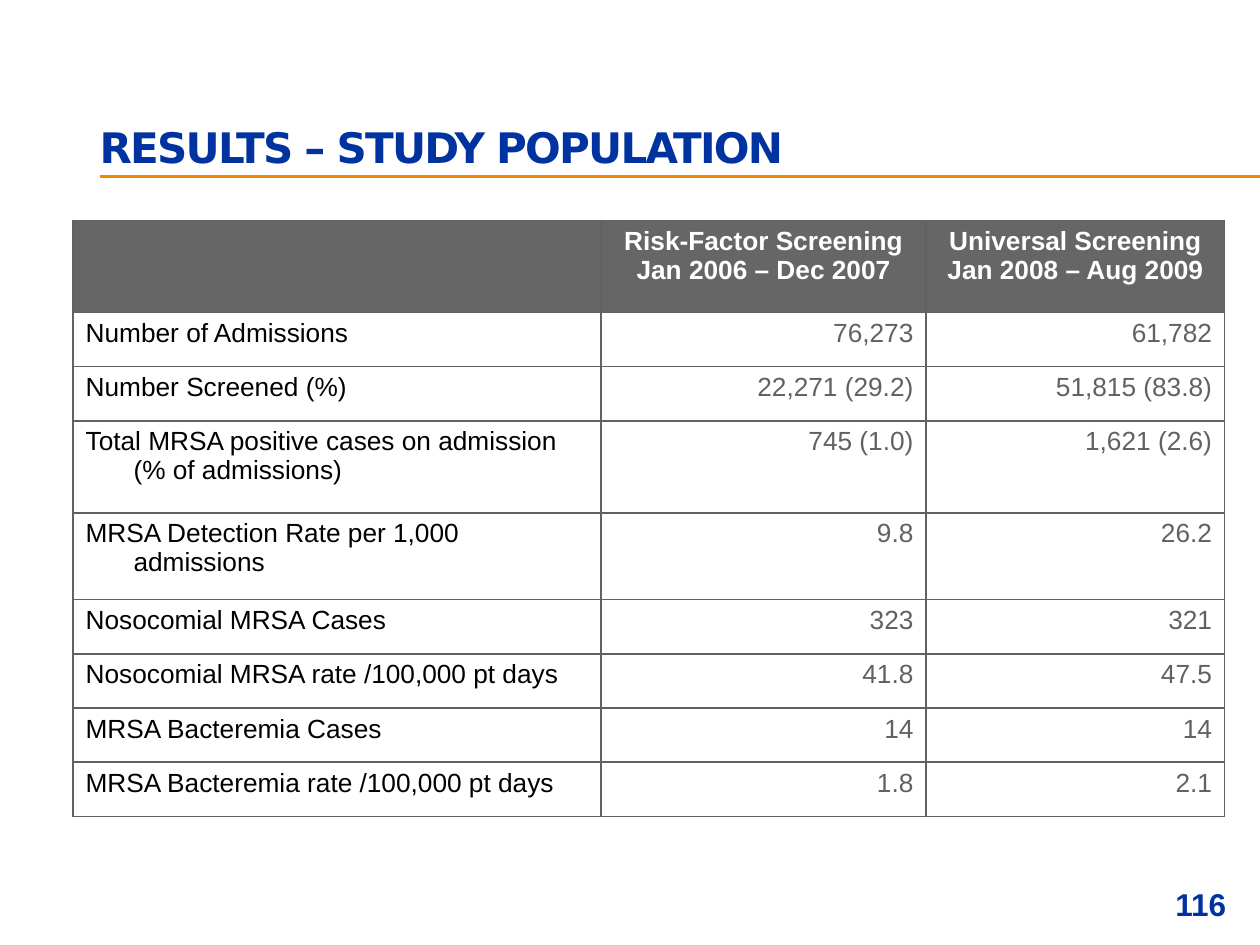
from dataclasses import dataclass

from lxml import etree
from pptx import Presentation
from pptx import util as u
from pptx.dml.color import RGBColor
from pptx.enum import shapes, text
from pptx.oxml import ns


@dataclass(frozen=True)
class Theme:
    blue: str = "0033A0"
    orange: str = "ED8B00"
    gray: str = "606164"
    header: str = "666666"
    white: str = "FFFFFF"
    black: str = "000000"
    font: str = "Arial"
    title_font: str = "DejaVu Sans"
    title_size: int = 24
    number_size: int = 18
    table_size: int = 15


T = Theme()
LEFT, CENTER, RIGHT = text.PP_ALIGN.LEFT, text.PP_ALIGN.CENTER, text.PP_ALIGN.RIGHT
COLUMNS = [4.19, 2.58, 2.37]
ROW_HEIGHTS = [0.73, 0.43, 0.43, 0.73, 0.69, 0.43, 0.43, 0.43, 0.43]
ROWS = [
    ("", "Risk-Factor Screening\nJan 2006 – Dec 2007",
     "Universal Screening\nJan 2008 – Aug 2009"),
    ("Number of Admissions", "76,273", "61,782"),
    ("Number Screened (%)", "22,271 (29.2)", "51,815 (83.8)"),
    ("Total MRSA positive cases on admission (% of admissions)", "745 (1.0)", "1,621 (2.6)"),
    ("MRSA Detection Rate per 1,000 admissions", "9.8", "26.2"),
    ("Nosocomial MRSA Cases", "323", "321"),
    ("Nosocomial MRSA rate /100,000 pt days", "41.8", "47.5"),
    ("MRSA Bacteremia Cases", "14", "14"),
    ("MRSA Bacteremia rate /100,000 pt days", "1.8", "2.1"),
]


def write(tf, content, *, size, color, font=T.font, bold=False, align=LEFT,
          hanging=0, line_spacing=None, tracking=None):
    """Fill a text frame, one paragraph per line of content."""
    for i, line in enumerate(content.split("\n")):
        p = tf.paragraphs[0] if i == 0 else tf.add_paragraph()
        p.alignment = align
        if line_spacing:
            p.line_spacing = line_spacing
        if hanging:
            pPr = p._p.get_or_add_pPr()
            pPr.set("marL", str(u.Inches(hanging)))
            pPr.set("indent", str(-u.Inches(hanging)))
        r = p.add_run()
        r.text = line
        r.font.name, r.font.size, r.font.bold = font, u.Pt(size), bold
        r.font.color.rgb = RGBColor.from_string(color)
        if tracking is not None:
            r._r.get_or_add_rPr().set("spc", str(int(tracking * 100)))


def add_title(s, content):
    sp = s.shapes.title
    sp.left, sp.top, sp.width, sp.height = map(u.Inches, (0.79, 0.61, 8.5, 0.79))
    tf = sp.text_frame
    tf.auto_size = text.MSO_AUTO_SIZE.NONE
    tf.word_wrap = True
    tf.vertical_anchor = text.MSO_ANCHOR.BOTTOM
    tf.margin_left = tf.margin_top = tf.margin_right = 0
    tf.margin_bottom = u.Inches(0.04)
    write(tf, content, size=T.title_size, color=T.blue, font=T.title_font,
          bold=True, line_spacing=0.8, tracking=-1)


def add_rule(s):
    line = s.shapes.add_connector(shapes.MSO_CONNECTOR.STRAIGHT, u.Inches(0.79),
                                  u.Inches(1.4), u.Inches(10), u.Inches(1.4))
    line.line.color.rgb = RGBColor.from_string(T.orange)
    line.line.width = u.Pt(2)
    etree.SubElement(line._element.spPr, ns.qn("a:effectLst"))


def set_borders(cell, color, width):
    tcPr = cell._tc.get_or_add_tcPr()
    for side in ("lnL", "lnR", "lnT", "lnB"):
        ln = etree.SubElement(tcPr, ns.qn(f"a:{side}"), w=str(u.Pt(width)))
        fill = etree.SubElement(ln, ns.qn("a:solidFill"))
        etree.SubElement(fill, ns.qn("a:srgbClr"), val=color)


def format_cell(cell, content, *, header, label):
    set_borders(cell, T.gray, 1)
    if header:
        cell.fill.solid()
        cell.fill.fore_color.rgb = RGBColor.from_string(T.header)
        color, align = T.white, CENTER
    else:
        cell.fill.background()
        color, align = (T.black, LEFT) if label else (T.gray, RIGHT)
    if content:
        write(cell.text_frame, content, size=T.table_size, color=color,
              bold=header, align=align, hanging=0.38)


def add_results_table(s):
    frame = s.shapes.add_table(len(ROWS), len(COLUMNS), u.Inches(0.58), u.Inches(1.75),
                               u.Inches(sum(COLUMNS)), u.Inches(sum(ROW_HEIGHTS)))
    table = frame.table
    table.horz_banding = False
    for column, width in zip(table.columns, COLUMNS):
        column.width = u.Inches(width)
    for i, (row, height) in enumerate(zip(table.rows, ROW_HEIGHTS)):
        row.height = u.Inches(height)
        for j, content in enumerate(ROWS[i]):
            format_cell(table.cell(i, j), content, header=i == 0, label=j == 0)


def add_page_number(s, number):
    box = s.shapes.add_textbox(*map(u.Inches, (9.06, 6.91, 0.77, 0.53)))
    tf = box.text_frame
    tf.word_wrap = True
    tf.vertical_anchor = text.MSO_ANCHOR.MIDDLE
    write(tf, number, size=T.number_size, color=T.blue, bold=True, align=RIGHT)


def main():
    prs = Presentation()
    prs.slide_width, prs.slide_height = u.Inches(10), u.Inches(7.5)
    s = prs.slides.add_slide(prs.slide_layouts[5])  # title only

    # Heading
    add_rule(s)
    add_title(s, "RESULTS – STUDY POPULATION")

    # Study figures
    add_results_table(s)

    # Footer
    add_page_number(s, "116")
    prs.save("out.pptx")


if __name__ == "__main__":
    main()
